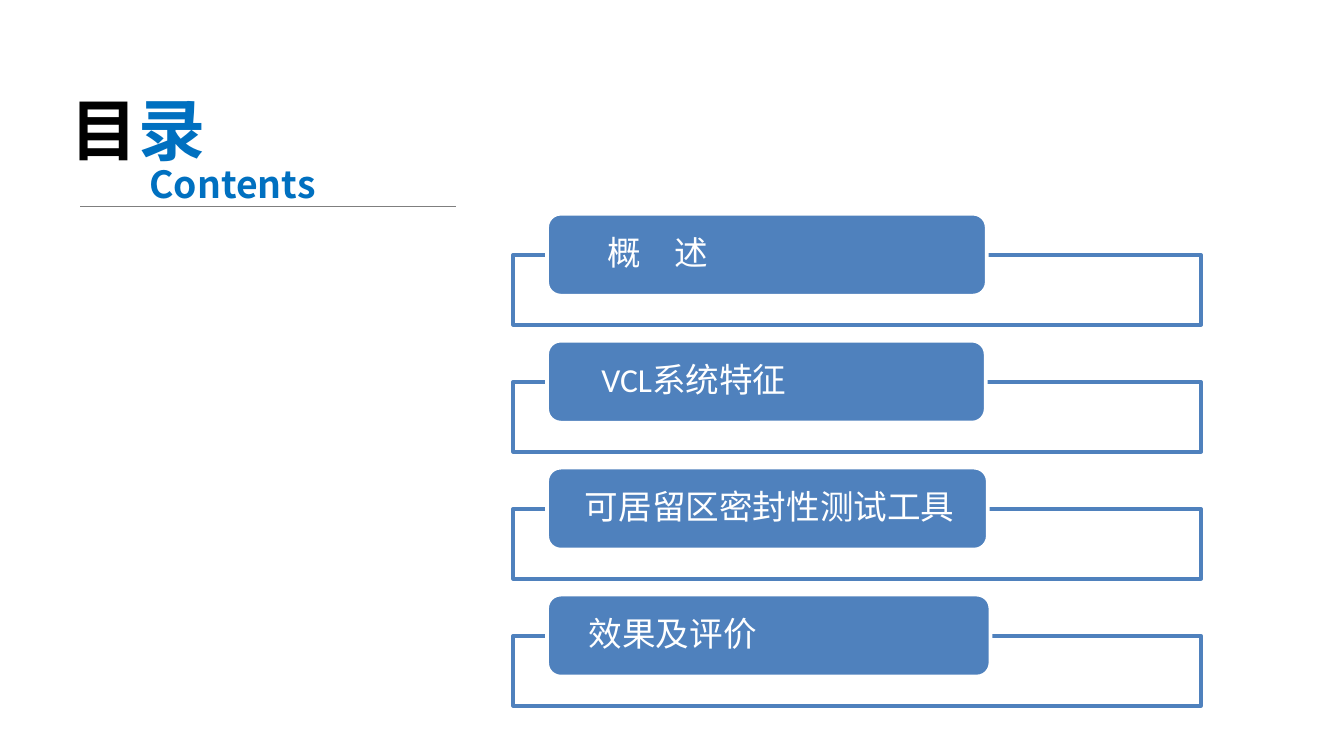
"""Build the contents slide with four outlined topic labels."""
from dataclasses import dataclass

from lxml import etree
from pptx import Presentation
from pptx.dml.color import RGBColor
from pptx.enum.shapes import MSO_CONNECTOR, MSO_SHAPE
from pptx.enum.text import MSO_ANCHOR, MSO_AUTO_SIZE, PP_ALIGN
from pptx.oxml.ns import qn
from pptx.shapes.autoshape import Shape
from pptx.slide import Slide
from pptx.util import Cm, Pt

RECTANGLE = MSO_SHAPE.RECTANGLE
ROUNDED = MSO_SHAPE.ROUNDED_RECTANGLE
STRAIGHT = MSO_CONNECTOR.STRAIGHT
MIDDLE = MSO_ANCHOR.MIDDLE
LEFT = PP_ALIGN.LEFT
GROW = MSO_AUTO_SIZE.SHAPE_TO_FIT_TEXT


@dataclass(frozen=True)
class Theme:
    white: RGBColor = RGBColor(0xFF, 0xFF, 0xFF)
    black: RGBColor = RGBColor(0, 0, 0)
    accent: RGBColor = RGBColor(0x4F, 0x81, 0xBD)
    heading: RGBColor = RGBColor(0x00, 0x70, 0xC0)
    rule: RGBColor = RGBColor(0x7F, 0x7F, 0x7F)
    heading_font: str = "Noto Sans CJK SC"
    label_font: str = "Calibri"
    title_size: int = 36
    subtitle_size: int = 20
    label_size: int = 18
    border: float = 2
    rule_width: float = 0.5


@dataclass(frozen=True)
class Area:
    left: float
    top: float
    width: float
    height: float


@dataclass(frozen=True)
class Topic:
    text: str
    width: float
    indent: float


@dataclass(frozen=True)
class Span:
    text: str
    color: RGBColor


THEME = Theme()
TOPICS = (
    Topic("概　述", 8.31, 1.07),
    Topic("VCL系统特征", 8.29, 0.95),
    Topic("可居留区密封性测试工具", 8.33, 0.64),
    Topic("效果及评价", 8.38, 0.71),
)
FIRST_LABEL_TOP = 4.04
TOPIC_STEP = 2.4
FRAME_DROP = 0.78


def add_panel(page: Slide, kind: MSO_SHAPE, area: Area, fill: RGBColor, line: RGBColor) -> Shape:
    panel = page.shapes.add_shape(
        kind, Cm(area.left), Cm(area.top), Cm(area.width), Cm(area.height)
    )
    panel.shadow.inherit = False
    panel.fill.solid()
    panel.fill.fore_color.rgb = fill
    panel.line.color.rgb = line
    panel.line.width = Pt(THEME.border)
    return panel


def add_topic(page: Slide, topic: Topic, top: float) -> None:
    frame_area = Area(9.7, top + FRAME_DROP, 13, 1.32)
    add_panel(page, RECTANGLE, frame_area, THEME.white, THEME.accent)
    label_area = Area(10.34, top, topic.width, 1.55)
    label = add_panel(page, ROUNDED, label_area, THEME.accent, THEME.white)
    frame = label.text_frame
    frame.text = topic.text
    frame.word_wrap = True
    frame.vertical_anchor = MIDDLE
    frame.margin_left = Cm(topic.indent)
    frame.margin_right = frame.margin_top = frame.margin_bottom = 0
    para = frame.paragraphs[0]
    para.alignment = LEFT
    para.line_spacing = 0.9
    font = para.runs[0].font
    font.name = THEME.label_font
    font.size = Pt(THEME.label_size)
    font.color.rgb = THEME.white


def add_heading(page: Slide, area: Area, size: int, spans: tuple[Span, ...]) -> None:
    box = page.shapes.add_textbox(
        Cm(area.left), Cm(area.top), Cm(area.width), Cm(area.height)
    )
    box.text_frame.word_wrap = True
    box.text_frame.auto_size = GROW
    para = box.text_frame.paragraphs[0]
    for span in spans:
        run = para.add_run()
        run.text = span.text
        run.font.name = THEME.heading_font
        run.font.size = Pt(size)
        run.font.bold = True
        run.font.color.rgb = span.color
        east_asian = etree.SubElement(run.font._element, qn("a:ea"))
        east_asian.set("typeface", THEME.heading_font)


def add_rule(page: Slide, left: float, right: float, top: float) -> None:
    rule = page.shapes.add_connector(STRAIGHT, Cm(left), Cm(top), Cm(right), Cm(top))
    rule.line.color.rgb = THEME.rule
    rule.line.width = Pt(THEME.rule_width)
    etree.SubElement(rule._element.spPr, qn("a:effectLst"))


def main() -> None:
    deck = Presentation()
    deck.slide_width, deck.slide_height = Cm(25.4), Cm(14.29)
    page = deck.slides.add_slide(deck.slide_layouts[6])
    for index, topic in enumerate(TOPICS):
        add_topic(page, topic, FIRST_LABEL_TOP + index * TOPIC_STEP)
    title = (Span("目", THEME.black), Span("录", THEME.heading))
    add_heading(page, Area(1.09, 1.55, 3.99, 1.8), THEME.title_size, title)
    add_rule(page, 1.52, 8.61, 3.91)
    subtitle = (Span("Contents", THEME.heading),)
    add_heading(page, Area(2.57, 2.92, 3.99, 1.12), THEME.subtitle_size, subtitle)
    deck.save("out.pptx")


if __name__ == "__main__":
    main()
